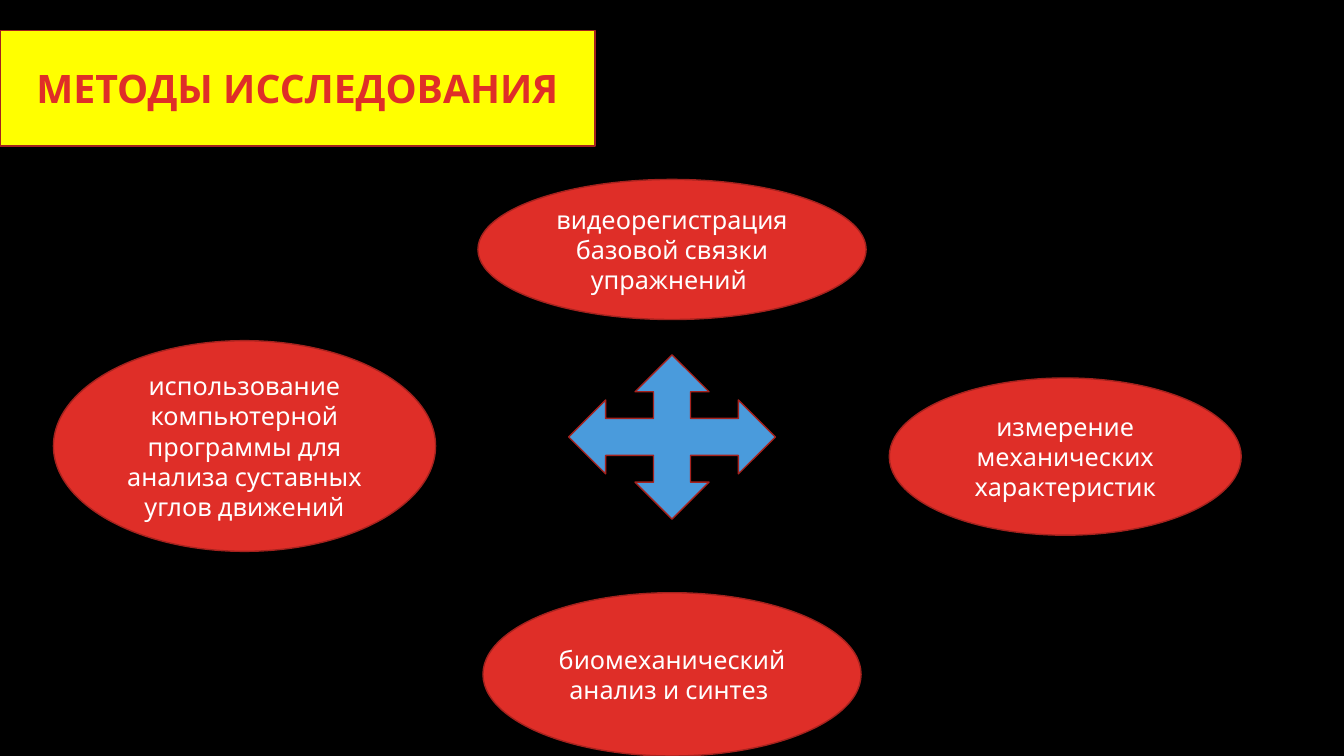
import pptx
import pptx.util
from lxml import etree
from pptx.dml.color import RGBColor
from pptx.enum.shapes import MSO_SHAPE
from pptx.enum.text import MSO_ANCHOR, MSO_AUTO_SIZE, PP_ALIGN
from pptx.oxml.ns import qn
from pptx.util import Inches

BLACK = RGBColor(0x00, 0x00, 0x00)
WHITE = RGBColor(0xFF, 0xFF, 0xFF)
YELLOW = RGBColor(0xFF, 0xFF, 0x00)
RED = RGBColor(0xDF, 0x2E, 0x28)
DARK_RED = RGBColor(0xA5, 0x22, 0x1E)
BLUE = RGBColor(0x4A, 0x9B, 0xDC)

FONT = "League Spartan"
TITLE = "МЕТОДЫ ИССЛЕДОВАНИЯ"
TITLE_AREA = (0, 0.3, 5.9, 1.15)
ARROW_AREA = (5.64, 3.52, 2.05, 1.63)
METHODS = [
    ("видеорегистрация базовой связки упражнений ", (4.74, 1.78, 3.85, 1.39)),
    ("использование компьютерной программы для анализа суставных углов движений",
     (0.53, 3.38, 3.79, 2.09)),
    ("биомеханический анализ и синтез ", (4.79, 5.88, 3.75, 1.62)),
    ("измерение механических характеристик", (8.82, 3.75, 3.49, 1.56)),
]


def paint(shape, color):
    """Give a shape its fill and the common thin outline."""
    shape.fill.solid()
    shape.fill.fore_color.rgb = color
    shape.line.color.rgb = DARK_RED
    shape.line.width = pptx.util.Pt(1)


def write(shape, text, *, size, color, bold=False):
    """Put centred text into a shape."""
    frame = shape.text_frame
    frame.word_wrap = True
    frame.auto_size = MSO_AUTO_SIZE.NONE
    frame.vertical_anchor = MSO_ANCHOR.MIDDLE
    para = frame.paragraphs[0]
    para.alignment = PP_ALIGN.CENTER
    span = para.add_run()
    span.text = text
    span.font.name = FONT
    span.font.size = pptx.util.Pt(size)
    span.font.bold = bold
    span.font.color.rgb = color


def add_figure(page, kind, area, color):
    """Add a painted preset shape without a shadow."""
    shape = page.shapes.add_shape(kind, *map(Inches, area))
    shape.shadow.inherit = False
    paint(shape, color)
    return shape


def add_title(page):
    """Turn the title placeholder into a rounded yellow banner."""
    title = page.shapes.title
    title.left, title.top, title.width, title.height = map(Inches, TITLE_AREA)
    outline = etree.SubElement(title.element.spPr, qn("a:prstGeom"), prst="roundRect")
    etree.SubElement(outline, qn("a:avLst"))
    paint(title, YELLOW)
    write(title, TITLE, size=28, color=RED, bold=True)


def main():
    """Build the slide of research methods."""
    deck = pptx.Presentation()
    deck.slide_width, deck.slide_height = Inches(13.33), Inches(7.5)
    page = deck.slides.add_slide(deck.slide_layouts.get_by_name("Title Only"))
    page.background.fill.solid()
    page.background.fill.fore_color.rgb = BLACK
    add_title(page)
    for text, area in METHODS:
        ellipse = add_figure(page, MSO_SHAPE.OVAL, area, RED)
        write(ellipse, text, size=18, color=WHITE)
    add_figure(page, MSO_SHAPE.QUAD_ARROW, ARROW_AREA, BLUE)
    deck.save("out.pptx")


if __name__ == "__main__":
    main()
